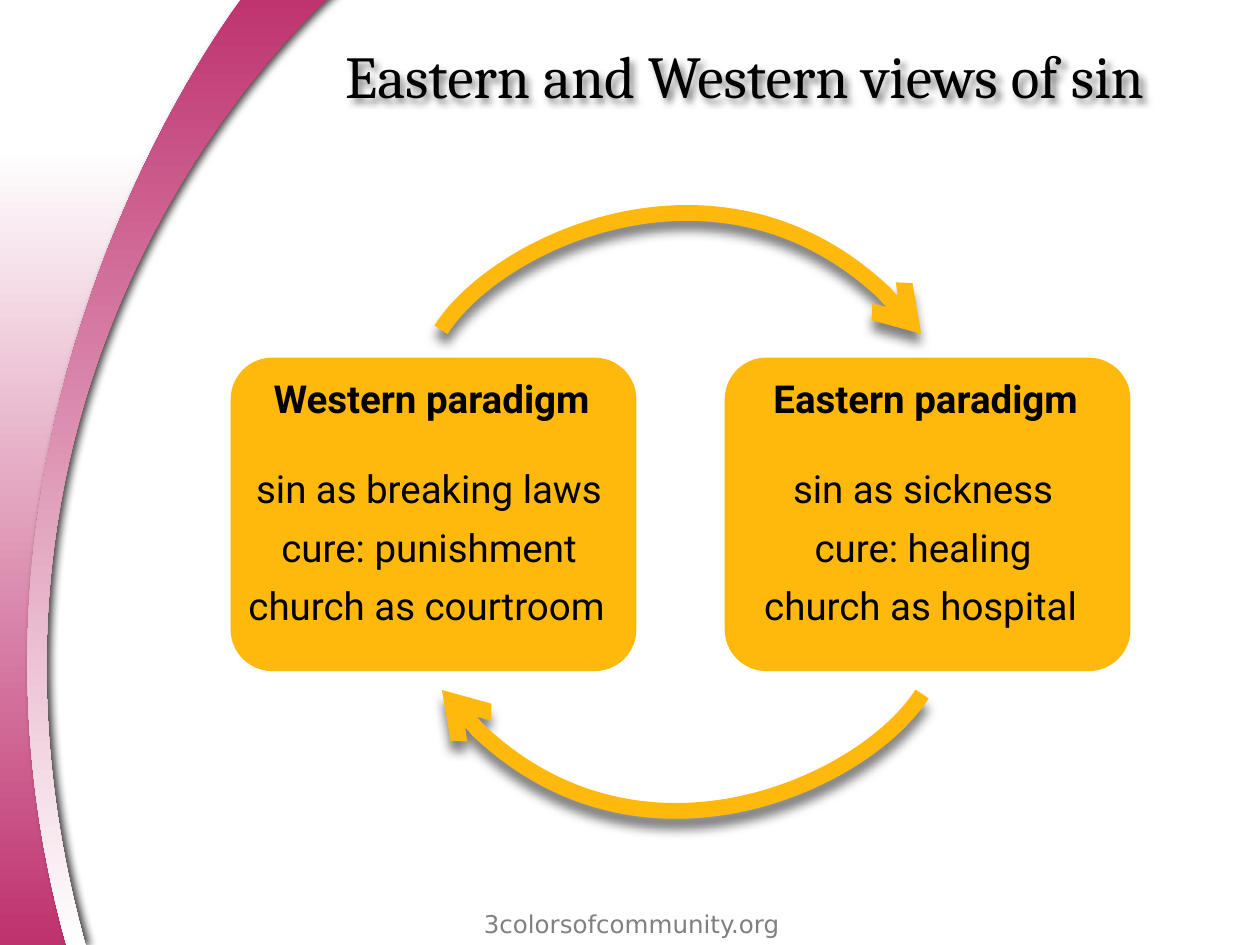
from dataclasses import dataclass

from lxml.etree import SubElement
from pptx import Presentation
from pptx.dml.color import RGBColor
from pptx.enum.shapes import MSO_SHAPE
from pptx.enum.text import MSO_ANCHOR, PP_ALIGN
from pptx.oxml.ns import qn
from pptx.util import Cm, Pt


@dataclass(frozen=True)
class Theme:
    ink: str = "000000"
    grey: str = "808080"
    white: str = "FFFFFF"
    pink: str = "BE326E"
    amber: str = "FFB90C"
    title_font: str = "Cambria"
    body_font: str = "Roboto"
    footer_font: str = "DejaVu Sans"
    title_size: int = 34
    body_size: int = 22
    footer_size: int = 14
    arrow_width: int = 9


class SlideBuilder:
    def __init__(self, slide, theme):
        self.slide = slide
        self.theme = theme

    def text(self, frame, words, font, size, color, bold=False, align=PP_ALIGN.CENTER,
             anchor=MSO_ANCHOR.MIDDLE, inset=None):
        box = self.slide.shapes.add_textbox(*map(Cm, frame))
        body = box.text_frame
        body.word_wrap = True
        body.vertical_anchor = anchor
        if inset is not None:
            body.margin_left = body.margin_right = Cm(inset)
            body.margin_top = body.margin_bottom = Cm(inset)
        body.text = words
        para = body.paragraphs[0]
        para.alignment = align
        span = para.runs[0].font
        span.name, span.size, span.bold = font, Pt(size), bold
        span.color.rgb = RGBColor.from_string(color)
        return box

    def shadow(self, shape, opacity, blur, distance, angle):
        shape.shadow.inherit = False
        effects = shape._element.spPr.find(qn("a:effectLst"))
        outer = SubElement(effects, qn("a:outerShdw"), blurRad=str(Pt(blur)),
                           dist=str(Pt(distance)), dir=str(angle * 60000),
                           algn="ctr", rotWithShape="0")
        color = SubElement(outer, qn("a:srgbClr"), val=self.theme.ink)
        SubElement(color, qn("a:alpha"), val=str(opacity * 1000))

    def curve(self, frame, steps, closed=False):
        """Draw moveTo, lnTo and cubicBezTo steps, given in slide centimetres."""
        left, top, width, height = frame
        right, bottom = left + width, top + height
        builder = self.slide.shapes.build_freeform(Cm(left), Cm(top))
        corners = [(right, top), (right, bottom), (left, bottom)]
        builder.add_line_segments([(Cm(x), Cm(y)) for x, y in corners], close=False)
        shape = builder.convert_to_shape()
        outline = shape._element.xpath(".//a:path")[0]
        for child in list(outline):
            outline.remove(child)
        for command, *points in steps:
            step = SubElement(outline, qn(f"a:{command}"))
            for x, y in points:
                SubElement(step, qn("a:pt"), x=str(Cm(x - left)), y=str(Cm(y - top)))
        if closed:
            SubElement(outline, qn("a:close"))
        shape.shadow.inherit = False
        return shape

    def gradient_area(self, frame, steps, top_color, bottom_color):
        shape = self.curve(frame, steps, closed=True)
        shape.line.fill.background()
        shape.fill.gradient()
        shape.fill.gradient_angle = 270
        stops = shape.fill.gradient_stops
        for stop, position, color in zip(stops, (0, 1), (top_color, bottom_color)):
            stop.position = position
            stop.color.rgb = RGBColor.from_string(color)
        return shape

    def arc_arrow(self, frame, start, *bend):
        shape = self.curve(frame, [("moveTo", start), ("cubicBezTo", *bend)])
        shape.fill.background()
        shape.line.width = Pt(self.theme.arrow_width)
        shape.line.color.rgb = RGBColor.from_string(self.theme.amber)
        SubElement(shape.line._get_or_add_ln(), qn("a:tailEnd"), type="arrow")
        self.shadow(shape, 50, 6, 6, 90)

    def card(self, left, heading, lines):
        theme = self.theme
        panel = self.slide.shapes.add_shape(MSO_SHAPE.ROUNDED_RECTANGLE, Cm(left), Cm(7.21),
                                            Cm(8.18), Cm(6.32))
        panel.adjustments[0] = 0.133
        panel.shadow.inherit = False
        panel.fill.solid()
        panel.fill.fore_color.rgb = RGBColor.from_string(theme.amber)
        panel.line.fill.background()
        rows = [(0.05, 7.52), (0.1, 9.32), (0.1, 10.52), (0.15, 11.68)]
        for index, ((shift, top), words) in enumerate(zip(rows, [heading, *lines])):
            self.text((left - shift, top, 8.2, 1.02), words, theme.body_font,
                      theme.body_size, theme.ink, bold=index == 0, inset=0)


def half_turn(point, center=(13.74, 10.32)):
    return tuple(2 * middle - value for value, middle in zip(point, center))


def main():
    theme = Theme()
    deck = Presentation()
    deck.slide_width, deck.slide_height = Cm(25.4), Cm(19.05)
    page = SlideBuilder(deck.slides.add_slide(deck.slide_layouts[6]), theme)

    page.gradient_area((-0.89, 2.97, 4.72, 16.08), [
        ("moveTo", (0, 2.97)),
        ("lnTo", (3.84, 2.97)),
        ("cubicBezTo", (-0.89, 10.97), (1.27, 17.5), (1.65, 19.05)),
        ("lnTo", (0, 19.05)),
        ("cubicBezTo", (-0.28, 16.36), (0, 2.97), (0, 2.97)),
    ], theme.white, theme.pink)
    ribbon = page.gradient_area((-1.7, -0.2, 8.46, 19.28), [
        ("moveTo", (1.35, 19.08)),
        ("lnTo", (1.73, 19.08)),
        ("cubicBezTo", (-1.63, 6.93), (6.78, -0.18), (6.78, -0.18)),
        ("lnTo", (5, -0.2)),
        ("cubicBezTo", (5, -0.2), (-1.7, 8.28), (1.35, 19.08)),
    ], theme.pink, theme.white)
    page.shadow(ribbon, 75, 5, 3, 0)

    title = page.text((6.71, 0, 18.69, 3.02), "Eastern and Western views of sin",
                      theme.title_font, theme.title_size, theme.ink, align=PP_ALIGN.LEFT)
    page.shadow(title, 50, 4, 3, 45)
    page.text((8.71, 18.21, 8.05, 0.84), "3colorsofcommunity.org", theme.footer_font,
              theme.footer_size, theme.grey, anchor=MSO_ANCHOR.TOP)

    page.card(4.65, "Western paradigm",
              ["sin as breaking laws", "cure: punishment", "church as courtroom"])
    page.card(14.61, "Eastern paradigm",
              ["sin as sickness", "cure: healing", "church as hospital"])

    left, top, width, height = 8.89, 4.32, 9.65, 2.39
    arc = [(8.89, 6.65), (10.01, 4.88), (15.21, 2.41), (18.57, 6.73)]
    page.arc_arrow((left, top, width, height), *arc)
    page.arc_arrow((*half_turn((left + width, top + height)), width, height),
                   *map(half_turn, arc))

    deck.save("out.pptx")


if __name__ == "__main__":
    main()
